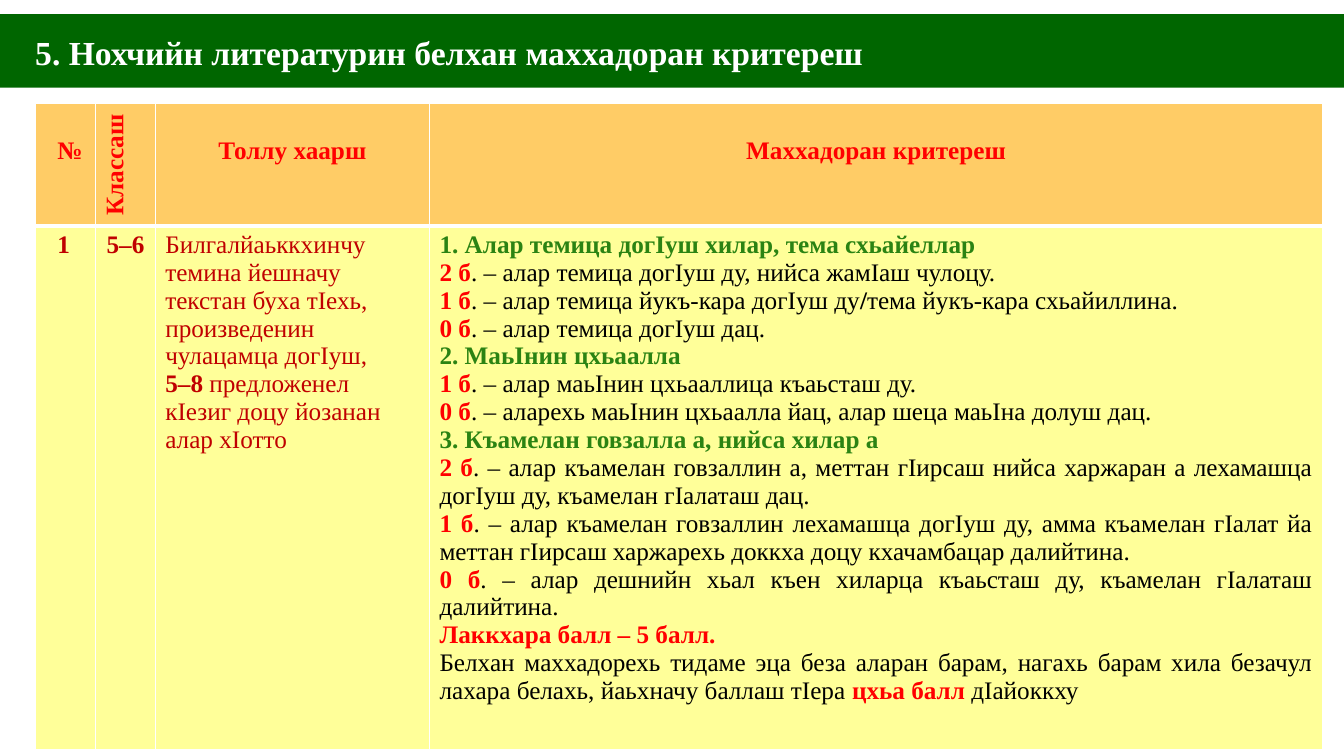
from lxml.etree import SubElement as Sub
from pptx import Presentation
from pptx.dml.color import RGBColor
from pptx.enum.shapes import MSO_SHAPE as Shape
from pptx.enum.text import MSO_ANCHOR as Anchor, PP_ALIGN as Align
from pptx.oxml.ns import qn
from pptx.util import Inches, Pt

FONT = "Times New Roman"
RED, DARK, GREEN, BLACK, WHITE = "FF0000", "C00000", "2B8313", "000000", "FFFFFF"
HEAD, BODY, BAR = "FFCC66", "FFFF99", "006600"
COLS = [0.6, 0.59, 2.72, 8.86]
ROWS = [1.21, 5.2]

TASK = [
    [("Билгалйаьккхинчу темина йешначу текстан буха тӀехь, произведенин "
      "чулацамца догӀуш,", DARK, False)],
    [("5–8 ", DARK, True),
     ("предложенел кӀезиг доцу йозанан алар хӀотто", DARK, False)],
]


def color(code):
    """Turn a hex string into a colour."""
    return RGBColor.from_string(code)


def title(text, tone=GREEN):
    """Return a bold paragraph of one run."""
    return [(text, tone, True)]


def score(mark, *texts):
    """Return a paragraph with a red mark, then plain text with bold odd parts."""
    runs = [(text, BLACK, i % 2 == 1) for i, text in enumerate(texts)]
    return [(f"{mark} б", RED, True)] + runs


RULES = [
    title("1. Алар темица догӀуш хилар, тема схьайеллар"),
    score(2, ". – алар темица догӀуш ду, нийса жамӀаш чулоцу."),
    score(1, ". – алар темица йукъ-кара догӀуш ду", "/",
          "тема йукъ-кара схьайиллина."),
    score(0, ". – алар темица догӀуш дац."),
    title("2. МаьӀнин цхьаалла"),
    score(1, ". – алар маьӀнин цхьааллица къаьсташ ду."),
    score(0, ". – аларехь маьӀнин цхьаалла йац, алар шеца маьӀна долуш дац."),
    title("3. Къамелан говзалла а, нийса хилар а"),
    score(2, ". – алар къамелан говзаллин а, меттан гӀирсаш нийса харжаран а "
          "лехамашца догӀуш ду, къамелан гӀалаташ дац."),
    score(1, ". – алар къамелан говзаллин лехамашца догӀуш ду, амма къамелан "
          "гӀалат йа меттан гӀирсаш харжарехь доккха доцу кхачамбацар далийтина."),
    score(0, ". – алар дешнийн хьал къен хиларца къаьсташ ду, къамелан "
          "гӀалаташ далийтина."),
    title("Лаккхара балл – 5 балл.", RED),
    [("Белхан маххадорехь тидаме эца беза аларан барам, нагахь барам хила "
      "безачул лахара белахь, йаьхначу баллаш тIера ", BLACK, False),
     ("цхьа балл ", RED, True), ("дIайоккху", BLACK, False)],
]


def write(frame, paras, size=18, align=Align.LEFT, line=None):
    """Fill a text frame with paragraphs of (text, colour, bold) runs."""
    frame.word_wrap = True
    for i, runs in enumerate(paras):
        para = frame.add_paragraph() if i else frame.paragraphs[0]
        para.alignment = align
        para.line_spacing = line
        for text, tone, bold in runs:
            run = para.add_run()
            run.text = text
            font = run.font
            font.name, font.size, font.bold = FONT, Pt(size), bold
            font.color.rgb = color(tone)


def edge(cell, **widths):
    """Draw white cell borders with widths in points."""
    props = cell._tc.get_or_add_tcPr()
    for side, width in widths.items():
        line = Sub(props, qn(f"a:ln{side}"), w=str(Pt(width)))
        fill = Sub(line, qn("a:solidFill"))
        Sub(fill, qn("a:srgbClr"), val=WHITE)


def banner(slide, text):
    """Add the green title bar."""
    bar = slide.shapes.add_shape(Shape.RECTANGLE, 0, Inches(0.14),
                                 Inches(13.33), Inches(0.73))
    bar.shadow.inherit = False
    bar.fill.solid()
    bar.fill.fore_color.rgb = color(BAR)
    bar.line.fill.background()
    frame = bar.text_frame
    frame.margin_left = Inches(0.35)
    frame.vertical_anchor = Anchor.MIDDLE
    write(frame, [title(text, WHITE)], size=24, line=1.07)


def grid(slide):
    """Add the empty table and return it."""
    table = slide.shapes.add_table(
        len(ROWS), len(COLS), Inches(0.35), Inches(1.03),
        Inches(sum(COLS)), Inches(sum(ROWS))).table
    table.first_row = table.horz_banding = False
    for col, width in zip(table.columns, COLS):
        col.width = Inches(width)
    for row, height, tone, top, base in zip(
            table.rows, ROWS, (HEAD, BODY), (1, 3), (3, 1)):
        row.height = Inches(height)
        for cell in row.cells:
            edge(cell, L=1, R=1, T=top, B=base)
            cell.fill.solid()
            cell.fill.fore_color.rgb = color(tone)
    return table


def main():
    """Build the slide and save it."""
    deck = Presentation()
    deck.slide_width, deck.slide_height = Inches(13.33), Inches(7.5)
    slide = deck.slides.add_slide(deck.slide_layouts[6])
    table = grid(slide)
    heads = ["№", "Классаш", "Толлу хаарш", "Маххадоран критереш"]
    sides = [Align.LEFT, Align.LEFT, Align.CENTER, Align.CENTER]
    for i, (text, side) in enumerate(zip(heads, sides)):
        cell = table.cell(0, i)
        write(cell.text_frame, [title(text, RED)], align=side)
        if i == 1:
            cell._tc.get_or_add_tcPr().set("vert", "vert270")
        else:
            cell.margin_top = Inches(0.33)
    bodies = [[title("1", DARK)], [title("5–6", DARK)], TASK, RULES]
    sides = [Align.LEFT, Align.CENTER, Align.LEFT, Align.JUSTIFY]
    for i, (paras, side) in enumerate(zip(bodies, sides)):
        write(table.cell(1, i).text_frame, paras, align=side)
    for row in range(len(ROWS)):
        cell = table.cell(row, 0)
        cell.margin_left, cell.margin_right = Inches(0.22), Inches(0.05)
    banner(slide, "5. Нохчийн литературин белхан маххадоран критереш")
    deck.save("out.pptx")


if __name__ == "__main__":
    main()
